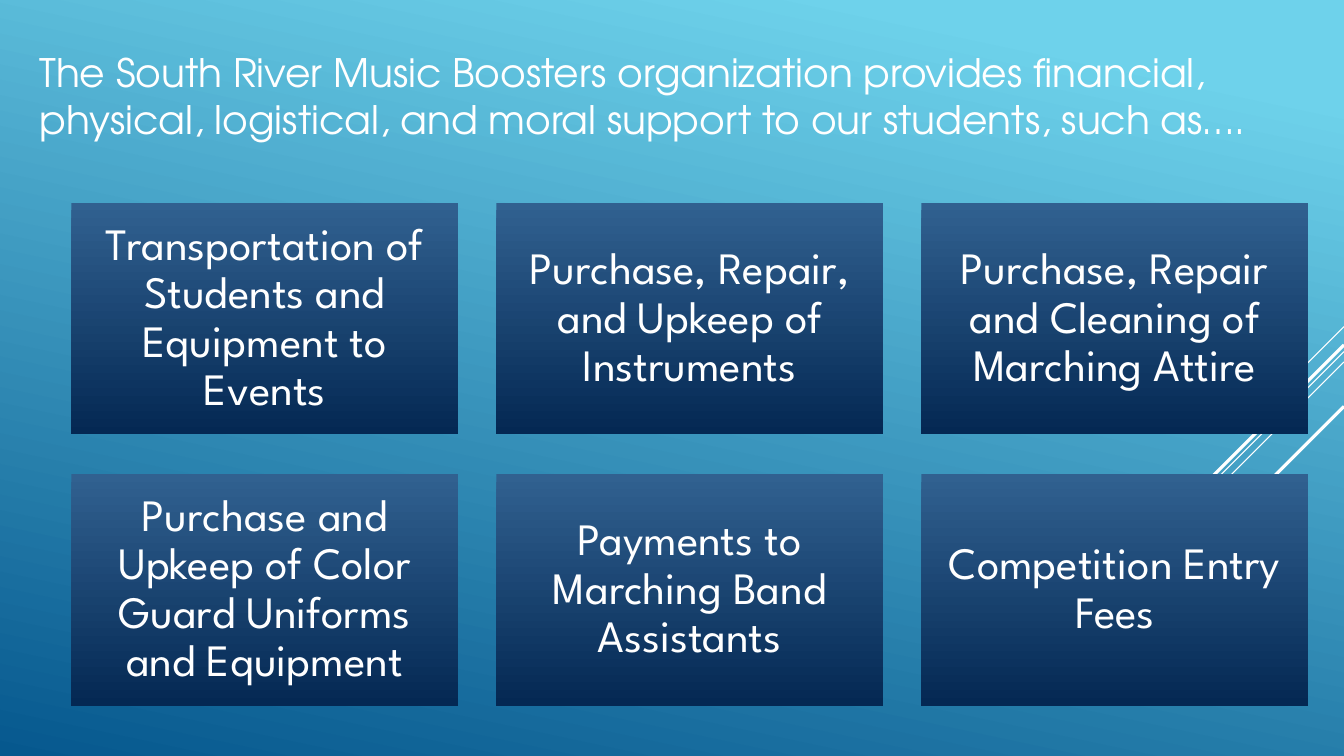
from lxml.etree import SubElement
from pptx import Presentation
from pptx.dml.color import RGBColor
from pptx.enum.shapes import MSO_CONNECTOR, MSO_SHAPE
from pptx.enum.text import MSO_ANCHOR, MSO_AUTO_SIZE, PP_ALIGN
from pptx.oxml.ns import qn
from pptx.util import Cm, Pt


def color(hex_string):
    return RGBColor.from_string(hex_string)


def fill_gradient(fill, angle, stops):
    fill.gradient()
    fill.gradient_angle = angle
    for stop, (position, hex_string) in zip(fill.gradient_stops, stops):
        stop.position = position
        stop.color.rgb = color(hex_string)


WHITE = "FFFFFF"
SLIDE_WIDTH = 33.87

presentation = Presentation()
presentation.slide_width = Cm(SLIDE_WIDTH)
presentation.slide_height = Cm(19.05)
slide = presentation.slides.add_slide(presentation.slide_layouts[5])

# Background
fill_gradient(slide.background.fill, 258, [(0.1, "6ED2EB"), (1, "06588E")])

# Diagonal rays from the right edge: top, run, width
rays = [(8.23, 2.54, 0.75), (8.86, 8.28, 0.75), (9.12, 5.26, 0.75),
        (8.69, 4.85, 2.25), (10.24, 3.53, 2.25)]
for top, run, width in rays:
    ray = slide.shapes.add_connector(
        MSO_CONNECTOR.STRAIGHT, Cm(SLIDE_WIDTH), Cm(top),
        Cm(SLIDE_WIDTH - run), Cm(top + run))
    ray.line.color.rgb = color(WHITE)
    ray.line.width = Pt(width)
    SubElement(ray._element.spPr, qn("a:effectLst"))

# Introduction
introduction = slide.shapes.title
introduction_place = {"left": Cm(0.74), "top": Cm(0.3),
                      "width": Cm(32.46), "height": Cm(4.19)}
for name, value in introduction_place.items():
    setattr(introduction, name, value)
introduction.text = ("The South River Music Boosters organization provides financial, "
                     "physical, logistical, and moral support to our students, such as….")
introduction_frame = introduction.text_frame
introduction_frame.auto_size = MSO_AUTO_SIZE.NONE
introduction_frame.vertical_anchor = MSO_ANCHOR.MIDDLE
sentence = introduction_frame.paragraphs[0]
sentence.alignment = PP_ALIGN.LEFT
sentence.font.name = "TeX Gyre Adventor"
sentence.font.size = Pt(28)
sentence.font.color.rgb = color(WHITE)

# Kinds of support, three to a row
supports = [
    "Transportation of Students and Equipment to Events",
    "Purchase, Repair, and Upkeep of Instruments",
    "Purchase, Repair and Cleaning of Marching Attire",
    "Purchase and Upkeep of Color Guard Uniforms and Equipment",
    "Payments to Marching Band Assistants",
    "Competition Entry Fees",
]
card_frame_format = {
    "word_wrap": True, "vertical_anchor": MSO_ANCHOR.MIDDLE,
    "margin_left": Cm(0.33), "margin_right": Cm(0.33),
    "margin_top": Cm(0.33), "margin_bottom": Cm(0.33),
}
for index, support in enumerate(supports):
    row, column = divmod(index, 3)
    card = slide.shapes.add_shape(
        MSO_SHAPE.RECTANGLE, Cm(1.8 + column * 10.71), Cm(5.11 + row * 6.83),
        Cm(9.75), Cm(5.84))
    card.shadow.inherit = False
    card.line.fill.background()
    fill_gradient(card.fill, 270, [(0, "316190"), (1, "042853")])
    for name, value in card_frame_format.items():
        setattr(card.text_frame, name, value)
    label = card.text_frame.paragraphs[0]
    label.text = support
    label.alignment = PP_ALIGN.CENTER
    label.line_spacing = 0.9
    label.font.name = "League Spartan"
    label.font.size = Pt(32)
    label.font.color.rgb = color(WHITE)

presentation.save("out.pptx")
